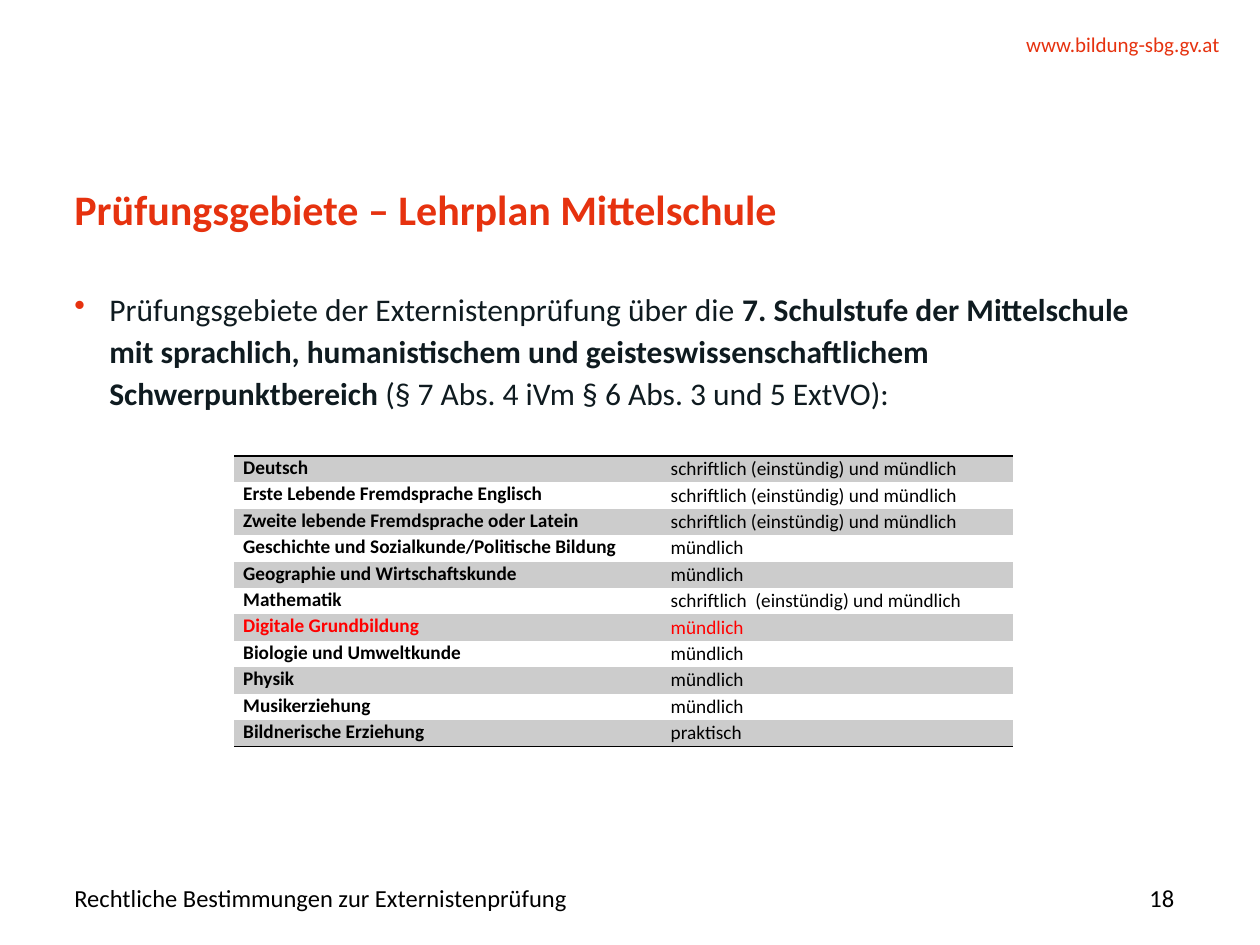
from lxml import etree
from pptx import Presentation
from pptx.dml.color import RGBColor
from pptx.enum import text
from pptx.oxml import ns
from pptx.util import Pt

FONT = "Calibri"
RED, INK, BLACK, GREY, ALERT = "E6320F", "0F1B20", "000000", "CCCCCC", "FF0000"
NO_TABLE_STYLE = "{2D5ABB26-0587-4C30-8999-92F81FD0307C}"

WRITTEN = "schriftlich (einstündig) und mündlich"
ORAL = "mündlich"
SUBJECTS = [
    ("Deutsch", WRITTEN),
    ("Erste Lebende Fremdsprache Englisch", WRITTEN),
    ("Zweite lebende Fremdsprache oder Latein", WRITTEN),
    ("Geschichte und Sozialkunde/Politische Bildung", ORAL),
    ("Geographie und Wirtschaftskunde", ORAL),
    ("Mathematik", "schriftlich  (einstündig) und mündlich"),
    ("Digitale Grundbildung", ORAL),
    ("Biologie und Umweltkunde", ORAL),
    ("Physik", ORAL),
    ("Musikerziehung", ORAL),
    ("Bildnerische Erziehung", "praktisch"),
]
HIGHLIGHTED = "Digitale Grundbildung"


def color(value):
    return RGBColor.from_string(value)


def add_run(paragraph, words, size, ink, bold=False):
    run = paragraph.add_run()
    run.text = words
    run.font.name = FONT
    run.font.size = Pt(size)
    run.font.bold = bold
    run.font.color.rgb = color(ink)


def prepare_frame(shape, anchor=text.MSO_ANCHOR.TOP):
    frame = shape.text_frame
    frame.word_wrap = True
    frame.auto_size = text.MSO_AUTO_SIZE.NONE
    frame.vertical_anchor = anchor
    frame.margin_left = frame.margin_right = 0
    frame.margin_top = frame.margin_bottom = 0
    return frame.paragraphs[0]


def add_text_box(slide, box, anchor=text.MSO_ANCHOR.TOP):
    return prepare_frame(slide.shapes.add_textbox(*map(Pt, box)), anchor)


def add_line(slide, box, words, size, ink, align=text.PP_ALIGN.LEFT):
    paragraph = add_text_box(slide, box, text.MSO_ANCHOR.MIDDLE)
    paragraph.alignment = align
    add_run(paragraph, words, size, ink)


def place_title(slide, box, words):
    title = slide.shapes.title
    title.left, title.top, title.width, title.height = map(Pt, box)
    paragraph = prepare_frame(title)
    paragraph.alignment = text.PP_ALIGN.LEFT
    paragraph.line_spacing = Pt(30)
    add_run(paragraph, words, 24, RED, bold=True)


def add_bullet_text(slide, box, parts):
    paragraph = add_text_box(slide, box)
    # Hanging red bullet
    properties = paragraph._p.get_or_add_pPr()
    properties.set("marL", str(Pt(20)))
    properties.set("indent", str(-Pt(20)))
    bullet_color = etree.SubElement(properties, ns.qn("a:buClr"))
    etree.SubElement(bullet_color, ns.qn("a:srgbClr"), val=RED)
    etree.SubElement(properties, ns.qn("a:buChar"), char="•")
    paragraph.line_spacing = Pt(24)
    paragraph.space_after = Pt(14.2)
    for words, bold in parts:
        add_run(paragraph, words, 18, INK, bold)


def add_border(cell, side):
    line = etree.Element(ns.qn(f"a:{side}"), w=str(Pt(1)))
    fill = etree.SubElement(line, ns.qn("a:solidFill"))
    etree.SubElement(fill, ns.qn("a:srgbClr"), val=BLACK)
    cell._tc.get_or_add_tcPr().insert(0, line)


def fill_cell(cell, words, ink, shaded, bold, margins):
    cell.margin_left, cell.margin_right, cell.margin_top, cell.margin_bottom = map(Pt, margins)
    if shaded:
        cell.fill.solid()
        cell.fill.fore_color.rgb = color(GREY)
    else:
        cell.fill.background()
    paragraph = cell.text_frame.paragraphs[0]
    paragraph.alignment = text.PP_ALIGN.JUSTIFY
    add_run(paragraph, words, 11, ink, bold)


def add_subject_table(slide, box, subjects):
    left, top, width, height = box
    frame = slide.shapes.add_table(len(subjects), 2, *map(Pt, box))
    table = frame.table
    table.first_row = table.horz_banding = False
    table._tbl.tblPr.find(ns.qn("a:tableStyleId")).text = NO_TABLE_STYLE
    table.columns[0].width = Pt(246)
    table.columns[1].width = Pt(width - 246)
    for index, (subject, exam) in enumerate(subjects):
        table.rows[index].height = Pt(height / len(subjects))
        ink = ALERT if subject == HIGHLIGHTED else BLACK
        shaded = index % 2 == 0
        fill_cell(table.cell(index, 0), subject, ink, shaded, True, (5, 5, 0, 0))
        fill_cell(table.cell(index, 1), exam, ink, shaded, False, (3.3, 0.7, 0.7, 0.7))
    # Rules above the first and below the last row
    for column in range(2):
        add_border(table.cell(0, column), "lnT")
        add_border(table.cell(len(subjects) - 1, column), "lnB")


def main():
    presentation = Presentation()
    presentation.slide_width, presentation.slide_height = Pt(720), Pt(540)
    slide = presentation.slides.add_slide(presentation.slide_layouts[5])

    # Header
    add_line(slide, (523.5, 18, 173.5, 14.6), "www.bildung-sbg.gv.at", 12, RED, text.PP_ALIGN.RIGHT)

    # Title and body
    place_title(slide, (42.5, 103.7, 628.5, 65.5), "Prüfungsgebiete – Lehrplan Mittelschule")
    add_bullet_text(slide, (42.5, 163.4, 628.5, 309), [
        ("Prüfungsgebiete der Externistenprüfung über die ", False),
        ("7. Schulstufe der Mittelschule mit sprachlich, humanistischem und "
         "geisteswissenschaftlichem Schwerpunktbereich ", True),
        ("(§ 7 Abs. 4 iVm § 6 Abs. 3 und 5 ExtVO):", False),
    ])

    # Footer
    add_line(slide, (42.5, 502.6, 541.5, 21), "Rechtliche Bestimmungen zur Externistenprüfung", 14, BLACK)
    add_line(slide, (607, 502.6, 64, 21), "18", 14, BLACK, text.PP_ALIGN.RIGHT)

    # Examination subjects
    add_subject_table(slide, (134, 260.6, 445, 166.1), SUBJECTS)

    presentation.save("out.pptx")


if __name__ == "__main__":
    main()
